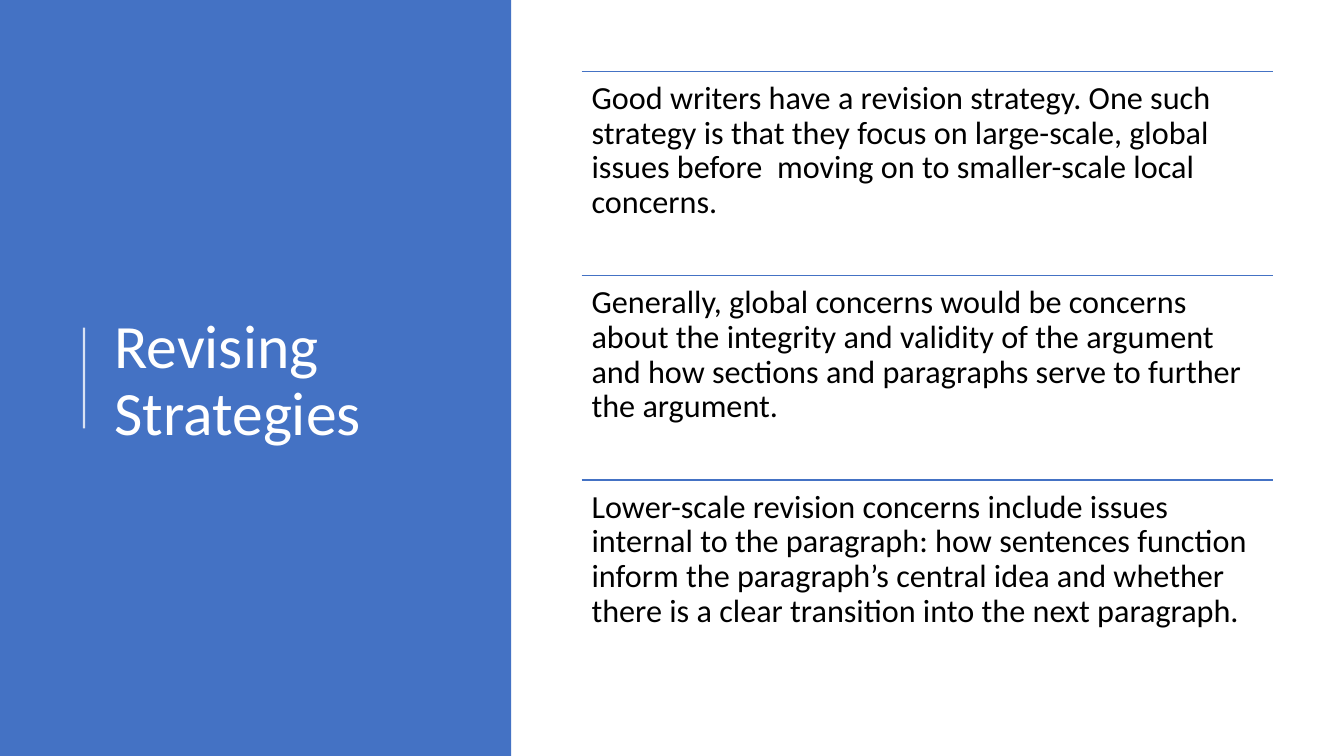
from dataclasses import dataclass

from lxml import etree
from pptx import Presentation
from pptx.dml.color import RGBColor
from pptx.enum.shapes import MSO_CONNECTOR, MSO_SHAPE
from pptx.enum.text import MSO_ANCHOR, MSO_AUTO_SIZE, PP_ALIGN
from pptx.oxml.ns import qn
from pptx.util import Inches, Pt

LINE, RECT = MSO_CONNECTOR.STRAIGHT, MSO_SHAPE.RECTANGLE
TOP, MIDDLE = MSO_ANCHOR.TOP, MSO_ANCHOR.MIDDLE
LEFT, NO_FIT = PP_ALIGN.LEFT, MSO_AUTO_SIZE.NONE
TITLE_ONLY = 5
COLS, ROWS = 160, 90

STRATEGIES = [
    "Good writers have a revision strategy. One such strategy is that they focus on "
    "large-scale, global issues before  moving on to smaller-scale local concerns.",
    "Generally, global concerns would be concerns about the integrity and validity of the "
    "argument and how sections and paragraphs serve to further the argument.",
    "Lower-scale revision concerns include issues internal to the paragraph: how sentences "
    "function inform the paragraph’s central idea and whether there is a clear transition "
    "into the next paragraph.",
]


@dataclass(frozen=True)
class Theme:
    """Colours, font and type sizes of the slide."""
    accent: RGBColor = RGBColor(0x44, 0x72, 0xC4)
    light: RGBColor = RGBColor(0xFF, 0xFF, 0xFF)
    dark: RGBColor = RGBColor(0, 0, 0)
    font: str = "Calibri"
    title_size: int = 44
    body_size: int = 23
    spacing: float = 0.9


class Deck:
    """Draws styled elements on the current slide, placed by grid columns and rows."""

    def __init__(self, prs, theme):
        self.theme = theme
        self.col, self.row = prs.slide_width / COLS, prs.slide_height / ROWS
        self.s = prs.slides.add_slide(prs.slide_layouts[TITLE_ONLY])

    def box(self, x, y, w, h):
        return [int(v) for v in (x * self.col, y * self.row, w * self.col, h * self.row)]

    def panel(self, x, y, w, h):
        sp = self.s.shapes.add_shape(RECT, *self.box(x, y, w, h))
        sp.shadow.inherit = False
        sp.fill.solid()
        sp.fill.fore_color.rgb = self.theme.accent
        sp.line.fill.background()
        self.s.shapes._spTree.insert(2, sp._element)

    def rule(self, x1, y1, x2, y2, color, width, opacity=100):
        ln = self.s.shapes.add_connector(LINE, *self.box(x1, y1, x2, y2))
        ln.line.color.rgb = color
        ln.line.width = Pt(width)
        sp_pr = ln._element.spPr
        if opacity < 100:
            alpha = etree.SubElement(next(sp_pr.iter(qn("a:srgbClr"))), qn("a:alpha"))
            alpha.set("val", str(opacity * 1000))
        etree.SubElement(sp_pr, qn("a:effectLst"))

    def add_text(self, sp, text, size, color, anchor):
        tf = sp.text_frame
        tf.word_wrap, tf.auto_size, tf.vertical_anchor = True, NO_FIT, anchor
        p = tf.paragraphs[0]
        p.alignment, p.line_spacing = LEFT, self.theme.spacing
        r = p.add_run()
        r.text = text
        r.font.name, r.font.size = self.theme.font, Pt(size)
        r.font.color.rgb = color
        return tf

    def title(self, text, x, y, w, h):
        sp = self.s.shapes.title
        sp.left, sp.top, sp.width, sp.height = self.box(x, y, w, h)
        self.add_text(sp, text, self.theme.title_size, self.theme.light, MIDDLE)

    def text(self, text, x, y, w, h):
        sp = self.s.shapes.add_textbox(*self.box(x, y, w, h))
        tf = self.add_text(sp, text, self.theme.body_size, self.theme.dark, TOP)
        tf.margin_left = tf.margin_right = tf.margin_top = tf.margin_bottom = Inches(0.1)


def main():
    prs = Presentation()
    prs.slide_width, prs.slide_height = Inches(13.33), Inches(7.5)
    theme = Theme()
    deck = Deck(prs, theme)

    deck.panel(0, 0, 60.85, ROWS)
    deck.rule(10, 39, 10, 51, theme.light, 1.5, opacity=80)
    deck.title("Revising Strategies", 12.4, 9.4, 44.3, 72.2)

    left, top, width, step = 69.25, 8.5, 82.35, 24.33
    for i, strategy in enumerate(STRATEGIES):
        y = top + i * step
        deck.rule(left, y, left + width, y, theme.accent, 1)
        deck.text(strategy, left, y, width, step)

    prs.save("out.pptx")


if __name__ == "__main__":
    main()
